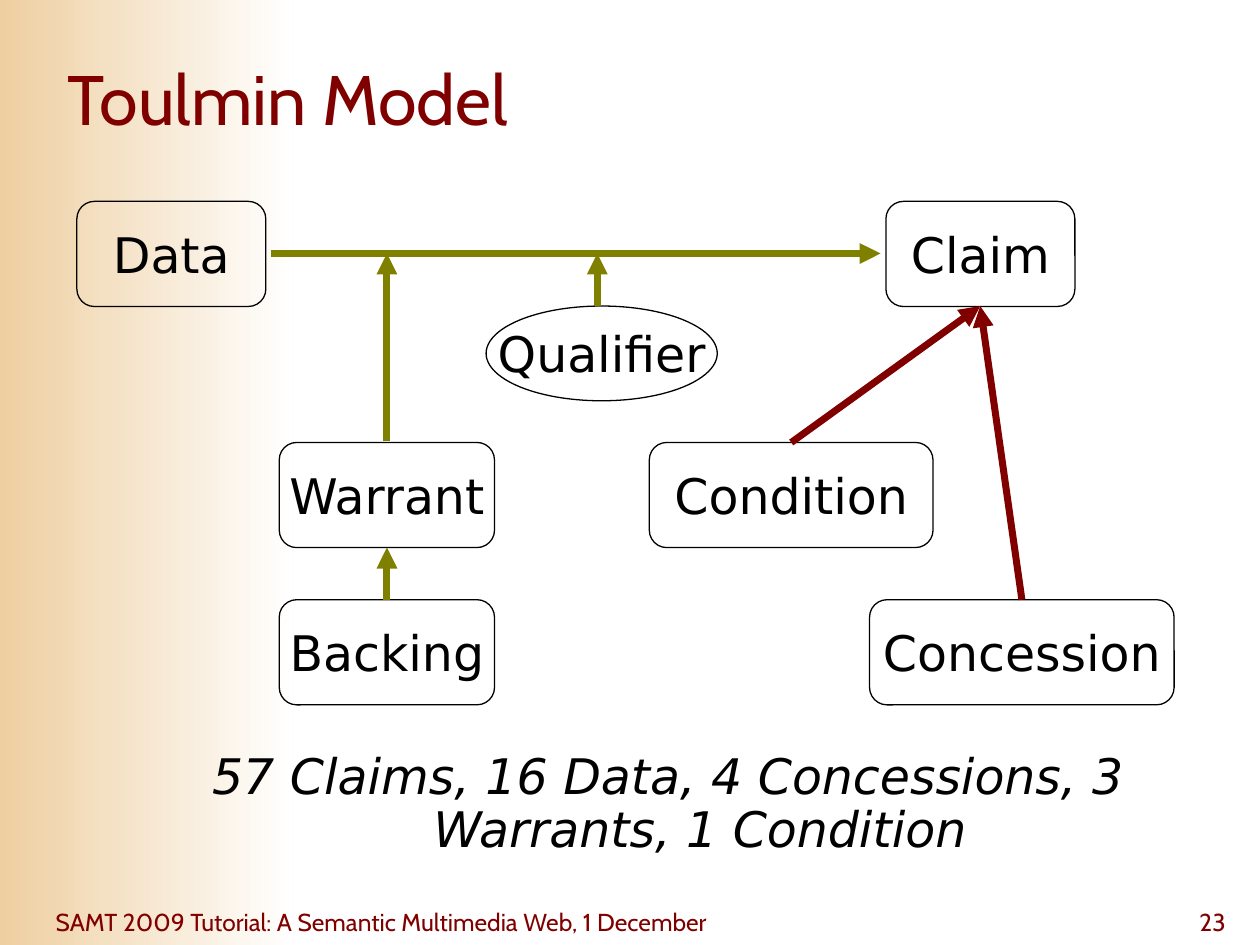
"""Build the Toulmin Model slide."""
from lxml import etree
from pptx import Presentation
from pptx.dml.color import RGBColor
from pptx.enum.shapes import MSO_CONNECTOR, MSO_SHAPE
from pptx.enum.text import MSO_ANCHOR, PP_ALIGN
from pptx.oxml.ns import qn
from pptx.util import Cm, Pt

RECT = MSO_SHAPE.RECTANGLE
ROUNDED = MSO_SHAPE.FLOWCHART_ALTERNATE_PROCESS
OVAL = MSO_SHAPE.OVAL
STRAIGHT = MSO_CONNECTOR.STRAIGHT
MIDDLE, TOP = MSO_ANCHOR.MIDDLE, MSO_ANCHOR.TOP
LEFT, CENTER, RIGHT = PP_ALIGN.LEFT, PP_ALIGN.CENTER, PP_ALIGN.RIGHT
MAROON, OLIVE, BLACK = "800000", "808000", "000000"


def rgb(value):
    return RGBColor.from_string(value)


def write(sp, text, size, font, color, align, anchor=MIDDLE, inset=(0, 0), wrap=True):
    tf = sp.text_frame
    tf.word_wrap = wrap
    tf.vertical_anchor = anchor
    tf.margin_left = tf.margin_right = Cm(inset[0])
    tf.margin_top = tf.margin_bottom = Cm(inset[1])
    p = tf.paragraphs[0]
    p.alignment = align
    r = p.add_run()
    r.text = text
    r.font.size = Pt(size)
    r.font.name = font
    r.font.color.rgb = rgb(color)
    return p, r


prs = Presentation()
prs.slide_width, prs.slide_height = Cm(25.4), Cm(19.05)
s = prs.slides.add_slide(prs.slide_layouts[6])

sp = s.shapes.add_shape(RECT, 0, 0, Cm(5.92), prs.slide_height)
sp.shadow.inherit = False
sp.line.fill.background()
sp.fill.gradient()
sp.fill.gradient_angle = 0
for stop, color in zip(sp.fill.gradient_stops, ("EECFA1", "FFFFFF")):
    stop.color.rgb = rgb(color)

footer = "SAMT 2009 Tutorial: A Semantic Multimedia Web, 1 December"
for text, x, y, w, h, size, align, inset in (
    (footer, 1.12, 18.11, 15.42, 0.94, 14, LEFT, (0, 0)),
    ("23", 19.43, 18.11, 5.28, 0.94, 14, RIGHT, (0, 0)),
    ("Toulmin Model", 1.12, 0.38, 23.62, 3.18, 40, LEFT, (0.25, 0.13)),
):
    sp = s.shapes.add_textbox(Cm(x), Cm(y), Cm(w), Cm(h))
    write(sp, text, size, "Cabin", MAROON, align, inset=inset)

for text, kind, x, y, w, h in (
    ("Claim", ROUNDED, 17.86, 4.06, 3.81, 2.12),
    ("Data", ROUNDED, 1.55, 4.06, 3.81, 2.12),
    ("Qualifier", OVAL, 9.8, 6.17, 4.66, 1.91),
    ("Warrant", ROUNDED, 5.63, 8.92, 4.34, 2.12),
    ("Backing", ROUNDED, 5.63, 12.09, 4.34, 2.12),
    ("Condition", ROUNDED, 13.09, 8.92, 5.72, 2.12),
    ("Concession", ROUNDED, 17.53, 12.09, 6.14, 2.12),
):
    sp = s.shapes.add_shape(kind, Cm(x), Cm(y), Cm(w), Cm(h))
    sp.shadow.inherit = False
    sp.fill.background()
    sp.line.color.rgb = rgb(BLACK)
    sp.line.width = Pt(0.75)
    write(sp, text, 28, "DejaVu Sans", BLACK, CENTER, wrap=False)

for color, x1, y1, x2, y2 in (
    (OLIVE, 7.8, 12.09, 7.8, 11.04),
    (OLIVE, 7.8, 8.9, 7.8, 5.11),
    (MAROON, 20.6, 12.09, 19.76, 6.17),
    (OLIVE, 5.46, 5.11, 17.75, 5.11),
    (OLIVE, 12.04, 6.17, 12.04, 5.11),
    (MAROON, 15.95, 8.92, 19.76, 6.17),
):
    cxn = s.shapes.add_connector(STRAIGHT, Cm(x1), Cm(y1), Cm(x2), Cm(y2))
    cxn.line.color.rgb = rgb(color)
    cxn.line.width = Pt(4)
    ln = cxn.line._get_or_add_ln()
    etree.SubElement(ln, qn("a:tailEnd"), type="triangle")
    etree.SubElement(cxn._element.spPr, qn("a:effectLst"))

sp = s.shapes.add_textbox(Cm(3.96), Cm(15.04), Cm(19), Cm(2.39))
summary = "57 Claims, 16 Data, 4 Concessions, 3 Warrants, 1 Condition"
p, r = write(sp, summary, 28, "DejaVu Sans", BLACK, CENTER, TOP, (0.25, 0.13))
r.font.italic = True
p.line_spacing = 0.9
pPr = p._p.get_or_add_pPr()
pPr.set("marL", str(Cm(1.3)))
pPr.set("indent", str(-Cm(1.3)))

prs.save("out.pptx")
